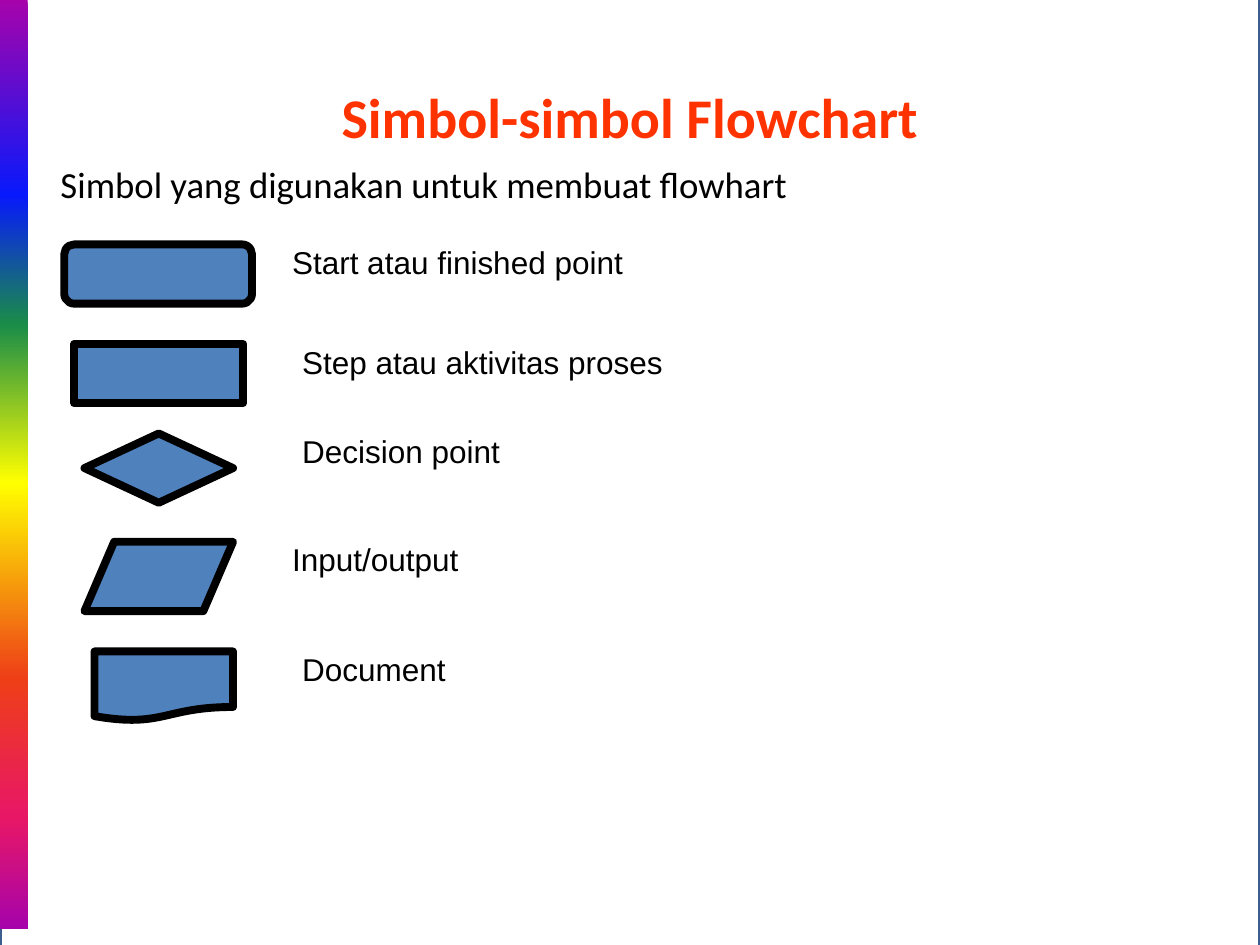
from dataclasses import dataclass

from lxml.etree import SubElement
from pptx import Presentation
from pptx.dml.color import RGBColor
from pptx.enum.shapes import MSO_SHAPE
from pptx.enum.text import MSO_ANCHOR, MSO_AUTO_SIZE, PP_ALIGN
from pptx.oxml.ns import qn
from pptx.util import Inches, Pt


@dataclass(frozen=True)
class Theme:
    heading_font: str = "Calibri"
    label_font: str = "Arial"
    title_size: float = 32
    subtitle_size: float = 21
    label_size: float = 18
    symbol_line: float = 4.5
    panel_line: float = 2
    title: str = "FF3300"
    text: str = "000000"
    symbol: str = "4F81BD"
    panel: str = "FFFFFF"
    panel_border: str = "3A5F8C"
    panel_opacity: int = 96
    rainbow: tuple = (
        (0, "A603AB"), (21, "0819FB"), (35, "1A8D48"), (52, "FFFF00"),
        (73, "EE3F17"), (88, "E81766"), (100, "A603AB"),
    )


THEME = Theme()

# Symbol, left, top, width, height, label left, label width, label
SYMBOLS = (
    (MSO_SHAPE.FLOWCHART_ALTERNATE_PROCESS, 0.51, 1.94, 1.49, 0.47,
     2.22, 2.83, "Start atau finished point"),
    (MSO_SHAPE.FLOWCHART_PROCESS, 0.59, 2.73, 1.34, 0.47,
     2.3, 3.06, "Step atau aktivitas proses"),
    (MSO_SHAPE.DIAMOND, 0.67, 3.44, 1.18, 0.55, 2.3, 1.77, "Decision point"),
    (MSO_SHAPE.FLOWCHART_DATA, 0.67, 4.3, 1.18, 0.55, 2.22, 1.52, "Input/output"),
    (MSO_SHAPE.FLOWCHART_DOCUMENT, 0.75, 5.17, 1.1, 0.55, 2.3, 1.34, "Document"),
)
LABEL_RISE = 0.06
LABEL_HEIGHT = 0.4


def color(value):
    return RGBColor.from_string(value)


def inches(*lengths):
    return [Inches(length) for length in lengths]


def style_text(text_frame, font_name, size, text_color, bold=False):
    for run in text_frame.paragraphs[0].runs:
        run.font.name = font_name
        run.font.size = Pt(size)
        run.font.bold = bold
        run.font.color.rgb = color(text_color)


def add_filled_shape(slide, kind, box, fill, line=None, line_width=0):
    shape = slide.shapes.add_shape(kind, *inches(*box))
    shape.shadow.inherit = False
    shape.fill.solid()
    shape.fill.fore_color.rgb = color(fill)
    if line:
        shape.line.color.rgb = color(line)
        shape.line.width = Pt(line_width)
    else:
        shape.line.fill.background()
    return shape


def set_opacity(shape, percent):
    fill_color = shape.fill._xPr.find(qn("a:solidFill"))[0]
    SubElement(fill_color, qn("a:alpha"), val=str(percent * 1000))


def set_gradient(shape, stops):
    """Fill the shape from top to bottom with (percent, colour) stops."""
    shape.fill.gradient()
    shape.fill.gradient_angle = 270
    stop_list = next(shape._element.iter(qn("a:gsLst")))
    for stop in list(stop_list):
        stop_list.remove(stop)
    for percent, value in stops:
        stop = SubElement(stop_list, qn("a:gs"), pos=str(percent * 1000))
        SubElement(stop, qn("a:srgbClr"), val=value)


def add_background(slide, panel_box, strip_box):
    panel = add_filled_shape(slide, MSO_SHAPE.RECTANGLE, panel_box, THEME.panel,
                             THEME.panel_border, THEME.panel_line)
    set_opacity(panel, THEME.panel_opacity)
    strip = add_filled_shape(slide, MSO_SHAPE.RECTANGLE, strip_box, THEME.panel)
    set_gradient(strip, THEME.rainbow)
    # Both go behind the placeholders
    for shape in (strip, panel):
        slide.shapes._spTree.insert(2, shape._element)


def fill_placeholder(placeholder, box, text, alignment, anchor):
    (placeholder.left, placeholder.top,
     placeholder.width, placeholder.height) = inches(*box)
    text_frame = placeholder.text_frame
    text_frame.text = text
    text_frame.auto_size = MSO_AUTO_SIZE.NONE
    text_frame.vertical_anchor = anchor
    text_frame.paragraphs[0].alignment = alignment
    text_frame.paragraphs[0].space_before = Pt(0)
    return text_frame


def add_headings(slide, title_box, subtitle_box):
    title = fill_placeholder(slide.shapes.title, title_box, "Simbol-simbol Flowchart",
                             PP_ALIGN.CENTER, MSO_ANCHOR.MIDDLE)
    style_text(title, THEME.heading_font, THEME.title_size, THEME.title, bold=True)
    subtitle = fill_placeholder(slide.placeholders[1], subtitle_box,
                                "Simbol yang digunakan untuk membuat flowhart",
                                PP_ALIGN.LEFT, MSO_ANCHOR.TOP)
    style_text(subtitle, THEME.heading_font, THEME.subtitle_size, THEME.text)


def add_label(slide, box, text):
    text_frame = slide.shapes.add_textbox(*inches(*box)).text_frame
    text_frame.text = text
    text_frame.word_wrap = False
    text_frame.auto_size = MSO_AUTO_SIZE.SHAPE_TO_FIT_TEXT
    style_text(text_frame, THEME.label_font, THEME.label_size, THEME.text)


def add_symbols(slide):
    for kind, left, top, width, height, label_left, label_width, label in SYMBOLS:
        add_filled_shape(slide, kind, (left, top, width, height), THEME.symbol,
                         THEME.text, THEME.symbol_line)
        add_label(slide, (label_left, top - LABEL_RISE, label_width, LABEL_HEIGHT), label)


def main():
    presentation = Presentation()
    presentation.slide_width, presentation.slide_height = inches(10, 7.5)
    slide = presentation.slides.add_slide(presentation.slide_layouts[0])
    add_background(slide, (0, -0.11, 10, 7.8), (0, 0, 0.22, 7.37))
    add_headings(slide, (0.5, 0.3, 9, 1.25), (0.38, 1.23, 9.45, 5.98))
    add_symbols(slide)
    presentation.save("out.pptx")


if __name__ == "__main__":
    main()
